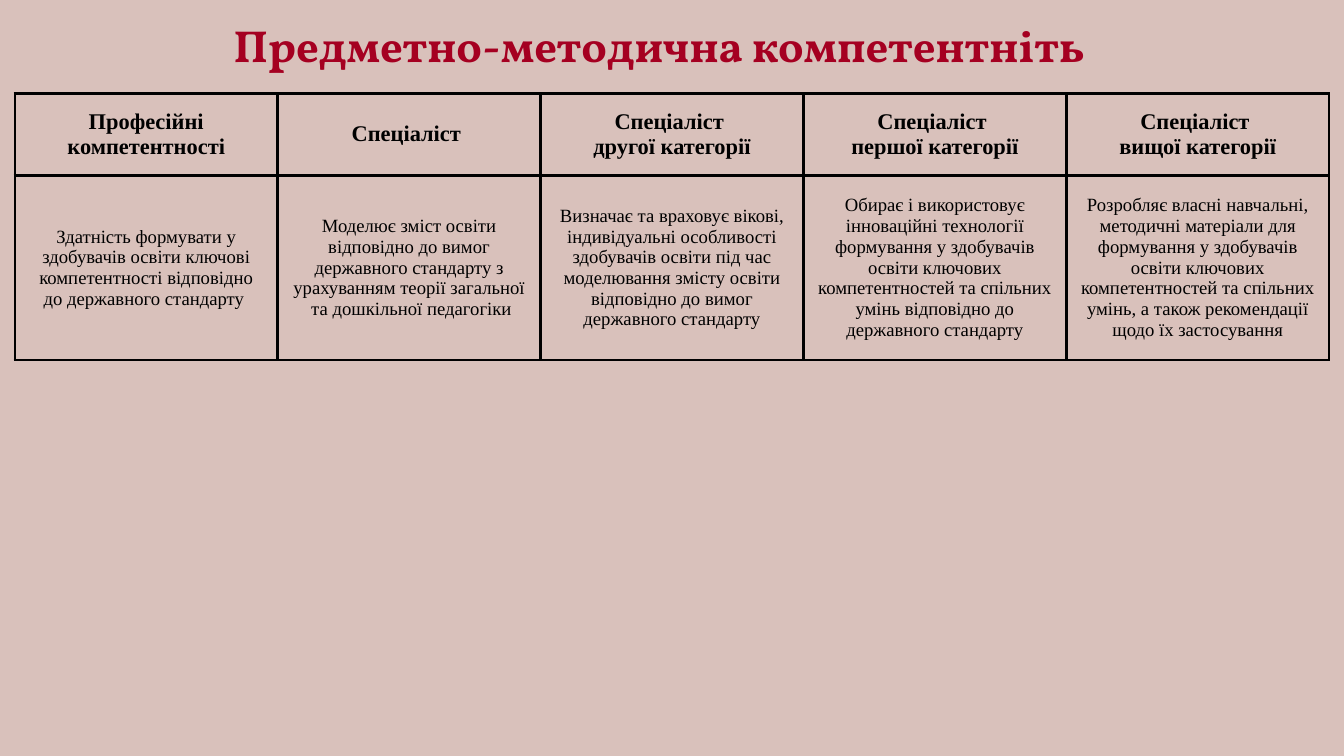
"""Builds a slide with a table of teaching competences by teacher category."""
from lxml import etree
from pptx import Presentation
from pptx.dml.color import RGBColor
from pptx.enum.text import MSO_ANCHOR, MSO_AUTO_SIZE, PP_ALIGN
from pptx.oxml.ns import qn
from pptx.util import Inches, Pt

CENTER = PP_ALIGN.CENTER
MIDDLE = MSO_ANCHOR.MIDDLE
TOP = MSO_ANCHOR.TOP
NO_FIT = MSO_AUTO_SIZE.NONE

COLORS = {"back": "D9C1BB", "title": "A50021", "ink": "000000"}
SIDES = ("a:lnL", "a:lnR", "a:lnT", "a:lnB")
ROWS = [
    [
        "Професійні компетентності",
        "Спеціаліст ",
        "Спеціаліст \nдругої категорії",
        "Спеціаліст \nпершої категорії",
        "Спеціаліст \nвищої категорії",
    ],
    [
        "Здатність формувати у здобувачів освіти ключові компетентності "
        "відповідно до державного стандарту ",
        "Моделює зміст освіти відповідно до вимог державного стандарту "
        "з урахуванням теорії загальної  та дошкільної педагогіки",
        "Визначає та враховує вікові, індивідуальні особливості здобувачів освіти "
        "під час моделювання змісту освіти відповідно до вимог державного стандарту",
        "Обирає і використовує інноваційні технології формування у здобувачів освіти "
        "ключових компетентностей та спільних умінь відповідно до державного стандарту",
        "Розробляє власні навчальні, методичні матеріали для формування у здобувачів "
        "освіти ключових компетентностей та спільних умінь, а також рекомендації "
        "щодо їх застосування",
    ],
]
HEIGHTS = (1.22, 2.75)
SIZES = (24, 20)


def style(frame, font, size, color, bold):
    for para in frame.paragraphs:
        para.alignment = CENTER
        for run in para.runs:
            run.font.name = font
            run.font.size = Pt(size)
            run.font.bold = bold
            run.font.color.rgb = RGBColor.from_string(COLORS[color])


def border(cell):
    props = cell._tc.get_or_add_tcPr()
    for spot, side in enumerate(SIDES):
        line = etree.Element(qn(side), w=str(Pt(3)))
        fill = etree.SubElement(line, qn("a:solidFill"))
        etree.SubElement(fill, qn("a:srgbClr"), val=COLORS["ink"])
        props.insert(spot, line)


prs = Presentation()
prs.slide_width = Inches(20)
prs.slide_height = Inches(11.25)
slide = prs.slides.add_slide(prs.slide_layouts[5])
slide.background.fill.solid()
slide.background.fill.fore_color.rgb = RGBColor.from_string(COLORS["back"])

title = slide.shapes.title
title.left, title.top = Inches(0.98), Inches(0.18)
title.width, title.height = Inches(17.66), Inches(0.89)
frame = title.text_frame
frame.text = "Предметно-методична компетентніть"
frame.word_wrap = True
frame.auto_size = NO_FIT
frame.vertical_anchor = TOP
frame.margin_left = frame.margin_right = frame.margin_top = frame.margin_bottom = 0
frame.paragraphs[0].line_spacing = 1.1
style(frame, "Vollkorn", 48, "title", True)

table = slide.shapes.add_table(
    len(ROWS), len(ROWS[0]), Inches(0.22), Inches(1.39), Inches(19.56), Inches(sum(HEIGHTS))
).table
table.horz_banding = False
for r, texts in enumerate(ROWS):
    table.rows[r].height = Inches(HEIGHTS[r])
    for c, text in enumerate(texts):
        cell = table.cell(r, c)
        cell.text_frame.text = text
        cell.vertical_anchor = MIDDLE
        cell.margin_left = cell.margin_right = Inches(0.21)
        cell.margin_top = cell.margin_bottom = Inches(0.21)
        cell.fill.background()
        border(cell)
        style(cell.text_frame, "Times New Roman", SIZES[r], "ink", r == 0)

prs.save("out.pptx")
